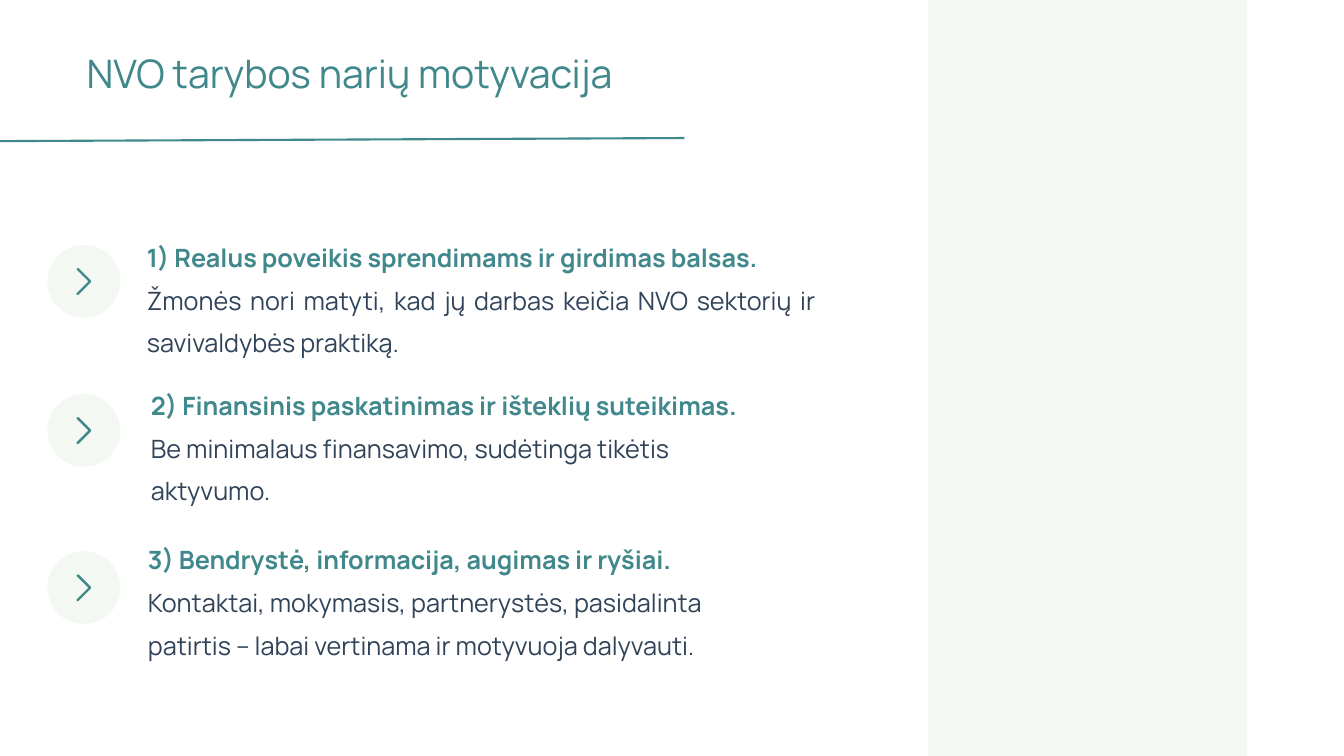
import pptx
import pptx.util
import pptx.dml.color
import pptx.enum.shapes
import pptx.enum.text
import pptx.oxml

Pt = pptx.util.Pt
RGB = pptx.dml.color.RGBColor
Align = pptx.enum.text.PP_ALIGN
Kind = pptx.enum.shapes.MSO_SHAPE

TEAL = RGB(0x40, 0x88, 0x8B)
NAVY = RGB(0x30, 0x43, 0x59)
MINT = RGB(0xF4, 0xF8, 0xF2)
WHITE = RGB(0xFF, 0xFF, 0xFF)
FONT = "Manrope"

CHEVRON = [(0, 0.5), (1.2, 0), (10.2, 9), (10.2, 10.2), (1.2, 19.2),
           (0, 19.2), (0, 18), (8.4, 9.6), (0, 1.2)]

ITEMS = [
    (97.9, 160.6, 491.8, 175,
     "1) Realus poveikis sprendimams ir girdimas balsas.",
     ["Žmonės nori matyti, kad jų darbas keičia NVO sektorių ir savivaldybės praktiką."]),
    (100.8, 266.4, 506.2, 281.5,
     "2) Finansinis paskatinimas ir išteklių suteikimas.",
     ["Be minimalaus finansavimo, sudėtinga tikėtis", "aktyvumo."]),
    (98.6, 376.6, 491.8, 393.8,
     "3) Bendrystė, informacija, augimas ir ryšiai.",
     ["Kontaktai, mokymasis, partnerystės, pasidalinta",
      "patirtis – labai vertinama ir motyvuoja dalyvauti."]),
]


def write(para, text, size=18, color=NAVY, bold=False, align=Align.LEFT, space=1.41):
    para.alignment = align
    para.line_spacing = space
    para.space_before = Pt(0)
    run = para.add_run()
    run.text = text
    run.font.name = FONT
    run.font.size = Pt(size)
    run.font.bold = bold
    run.font.color.rgb = color


def paint(shape, color):
    shape.shadow.inherit = False
    shape.fill.solid()
    shape.fill.fore_color.rgb = color
    shape.line.fill.background()


def add_block(slide, kind, left, top, width, height):
    block = slide.shapes.add_shape(kind, Pt(left), Pt(top), Pt(width), Pt(height))
    paint(block, MINT)


def add_head(slide, left, top, width, height):
    title = slide.shapes.title
    title.left, title.top = Pt(left), Pt(top)
    title.width, title.height = Pt(width), Pt(height)
    title.fill.solid()
    title.fill.fore_color.rgb = WHITE
    frame = title.text_frame
    frame.word_wrap = True
    frame.auto_size = pptx.enum.text.MSO_AUTO_SIZE.NONE
    frame.vertical_anchor = pptx.enum.text.MSO_ANCHOR.TOP
    write(frame.paragraphs[0], "NVO tarybos narių motyvacija",
          size=28, color=TEAL, space=1.07)


def add_rule(slide, left, top, right, end):
    rule = slide.shapes.add_connector(
        pptx.enum.shapes.MSO_CONNECTOR.STRAIGHT, Pt(left), Pt(top), Pt(right), Pt(end))
    rule.line.color.rgb = TEAL
    rule.line.width = Pt(1.5)
    pptx.oxml.xmlchemy.OxmlElement
    rule._element.spPr.append(pptx.oxml.xmlchemy.OxmlElement("a:effectLst"))


def add_mark(slide, left, top, size):
    add_block(slide, Kind.OVAL, left, top, size, size)
    dots = [(Pt(left + 20.9 + x), Pt(top + 16.4 + y)) for x, y in CHEVRON]
    form = slide.shapes.build_freeform(*dots[0])
    form.add_line_segments(dots[1:], close=True)
    paint(form.convert_to_shape(), TEAL)


def add_item(slide, left, top, width, height, head, lines):
    box = slide.shapes.add_textbox(Pt(left), Pt(top), Pt(width), Pt(height))
    frame = box.text_frame
    frame.word_wrap = True
    write(frame.paragraphs[0], head, color=TEAL, bold=True)
    for line in lines:
        write(frame.add_paragraph(), line, align=Align.JUSTIFY)


def main():
    deck = pptx.Presentation()
    deck.slide_width, deck.slide_height = Pt(960), Pt(540)
    slide = deck.slides.add_slide(deck.slide_layouts[5])
    add_block(slide, Kind.RECTANGLE, 663, 0, 227.6, 540)
    add_head(slide, 54.7, 29.5, 578.2, 41)
    for left, top, width, mark, head, lines in ITEMS:
        add_mark(slide, 33.9, mark, 52)
        add_item(slide, left, top, width, 99.4, head, lines)
    add_rule(slide, 0, 100.8, 488.9, 98.6)
    deck.save("out.pptx")


if __name__ == "__main__":
    main()
